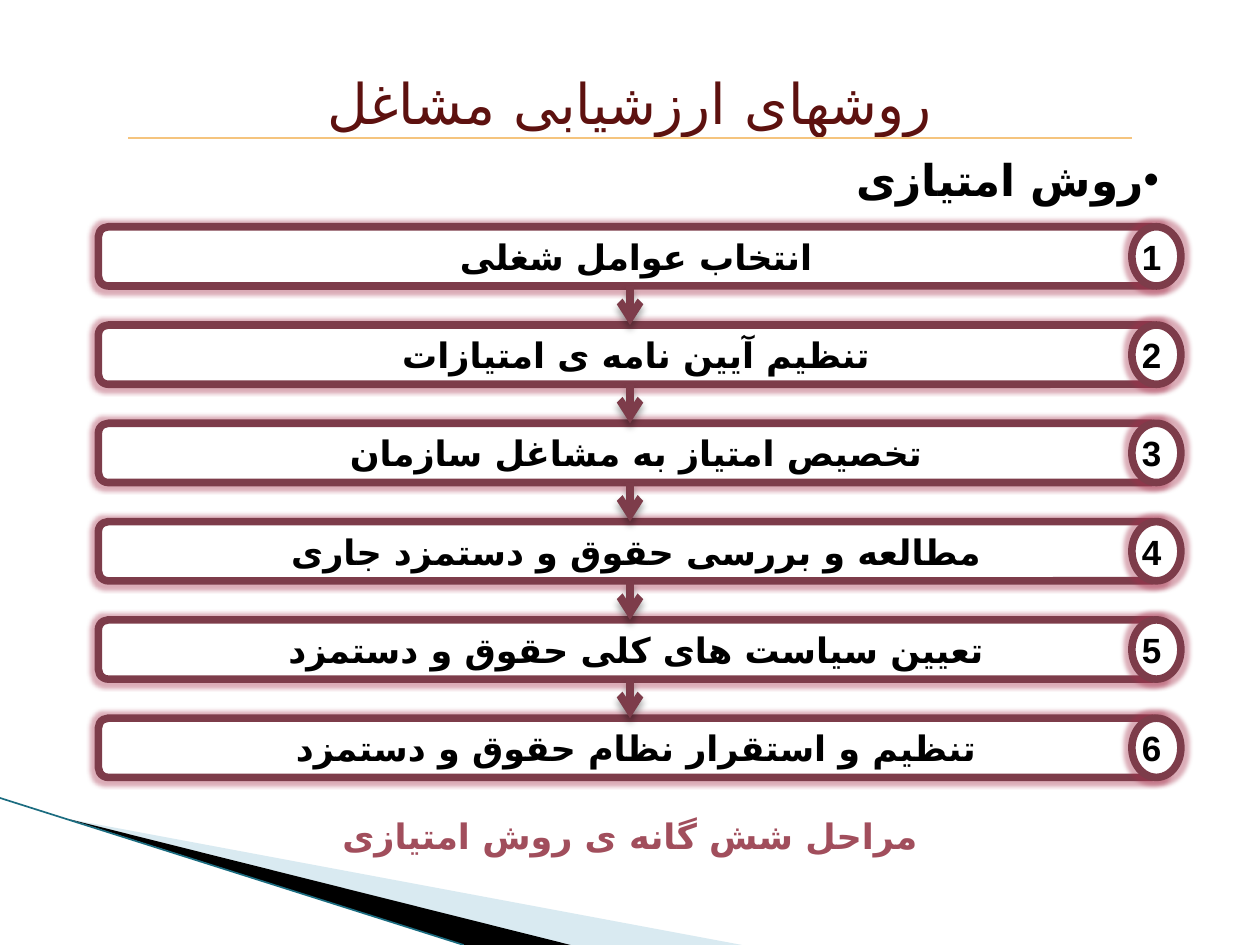
from lxml import etree
from pptx import Presentation
from pptx import util as u
from pptx.dml.color import RGBColor
from pptx.enum import shapes, text
from pptx.oxml import ns

Pt = u.Pt
COLORS = {"white": "FFFFFF", "black": "000000", "title": "5D110F", "rule": "F5C47E",
          "frame": "7D3C4A", "glow": "A5304B", "caption": "A14E5C",
          "wedge": "A0CBDC", "edge": "1B6C80"}
STEPS = ["انتخاب عوامل شغلی ", "تنظیم آیین نامه ی امتیازات ",
         "تخصیص امتیاز به مشاغل سازمان ", "مطالعه و بررسی حقوق و دستمزد جاری ",
         "تعیین سیاست های کلی حقوق و دستمزد ", "تنظیم و استقرار نظام حقوق و دستمزد "]


def rgb(name):
    return RGBColor.from_string(COLORS[name])


def add_xml(parent, tag, **attrs):
    return etree.SubElement(parent, ns.qn(tag), {k: str(v) for k, v in attrs.items()})


def add_effect(shape, tag, color, alpha, **attrs):
    """Give the shape one effect, such as a glow or an outer shadow."""
    sp_pr = shape._element.spPr
    for old in sp_pr.findall(ns.qn("a:effectLst")):
        sp_pr.remove(old)
    effect = add_xml(add_xml(sp_pr, "a:effectLst"), tag, **attrs)
    add_xml(add_xml(effect, "a:srgbClr", val=COLORS[color]), "a:alpha", val=alpha * 1000)


def write(shape, words, size, color="black", font="Arial", script_font="DejaVu Sans",
          bold=True, align="CENTER", anchor="TOP", spacing=None, bullet=None,
          indent=0, right_inset=7.2):
    """Fill the shape with one right-to-left paragraph."""
    frame = shape.text_frame
    frame.word_wrap = True
    frame.auto_size = text.MSO_AUTO_SIZE.NONE
    frame.vertical_anchor = getattr(text.MSO_ANCHOR, anchor)
    frame.margin_right = Pt(right_inset)
    paragraph = frame.paragraphs[0]
    p_pr = paragraph._p.get_or_add_pPr()
    p_pr.set("rtl", "1")
    if bullet:
        p_pr.set("marL", "0")
        p_pr.set("indent", str(Pt(indent)))
        add_xml(p_pr, "a:buFont", typeface="Arial")
        add_xml(p_pr, "a:buChar", char=bullet)
        add_xml(add_xml(p_pr, "a:tabLst"), "a:tab", pos=Pt(14), algn="l")
    paragraph.alignment = getattr(text.PP_ALIGN, align)
    if spacing:
        paragraph.line_spacing = spacing
    run = paragraph.add_run()
    run.text = words
    run.font.size, run.font.bold, run.font.name = Pt(size), bold, font
    run.font.color.rgb = rgb(color)
    add_xml(run._r.get_or_add_rPr(), "a:cs", typeface=script_font)


def add_line(slide, start, end, color, width):
    line = slide.shapes.add_connector(shapes.MSO_CONNECTOR.STRAIGHT,
                                      *(Pt(v) for v in start + end))
    line.line.color.rgb, line.line.width = rgb(color), Pt(width)
    add_xml(line._element.spPr, "a:effectLst")
    return line


def add_wedge(slide, points, color, alpha=100):
    builder = slide.shapes.build_freeform(*points[0], scale=Pt(1))
    builder.add_line_segments(points[1:], close=True)
    wedge = builder.convert_to_shape()
    wedge.shadow.inherit = False
    wedge.fill.solid()
    wedge.fill.fore_color.rgb = rgb(color)
    wedge.line.fill.background()
    fill_color = wedge._element.spPr.find(ns.qn("a:solidFill"))[0]
    add_xml(fill_color, "a:alpha", val=alpha * 1000)


def add_corner(slide, left, top, bottom):
    """Draw the wedges that start at the left edge and run to the bottom."""
    tip = (left + 39, top + 12)
    add_wedge(slide, [tip, (left + 424, bottom), (left + 325, bottom)], "wedge", 40)
    add_wedge(slide, [tip, (left + 326, bottom), (left + 265, bottom)], "black")
    add_line(slide, (left, top), (left + 265, bottom), "edge", 0.95)


def add_title(slide, left, top, width, height):
    title = slide.shapes.title
    title.left, title.top, title.width, title.height = map(Pt, (left, top, width, height))
    write(title, "روشهای ارزشیابی مشاغل", 32, color="title", bold=False, spacing=1.5)
    add_line(slide, (left + 73.4, top + 62.3), (left + width - 73.4, top + 62.3),
             "rule", 1.25)


def add_label(slide, box, words, size, **style):
    write(slide.shapes.add_textbox(*map(Pt, box)), words, size, spacing=1.5, **style)


def add_framed(slide, kind, box, words, **style):
    shape = slide.shapes.add_shape(kind, *map(Pt, box))
    shape.fill.solid()
    shape.fill.fore_color.rgb = rgb("white")
    shape.line.color.rgb, shape.line.width = rgb("frame"), Pt(4.33)
    add_effect(shape, "a:glow", "glow", 40, rad=Pt(5))
    write(shape, words, 20, font="Noto Sans Mono", anchor="MIDDLE", **style)


def add_arrow(slide, x, top, bottom):
    arrow = add_line(slide, (x, top), (x, bottom), "frame", 4.33)
    add_xml(arrow.line._get_or_add_ln(), "a:tailEnd", type="arrow")
    add_effect(arrow, "a:outerShdw", "black", 35, blurRad=Pt(4), dist=Pt(3),
               dir=90 * 60000, rotWithShape=0)


def add_steps(slide, left, top, width, bar_height=33.84, pitch=56.16):
    """Stack numbered bars, each joined to the next by an arrow."""
    badge_width = 28
    for number, step in enumerate(STEPS, 1):
        y = top + (number - 1) * pitch
        add_framed(slide, shapes.MSO_SHAPE.ROUNDED_RECTANGLE,
                   (left, y, width, bar_height), step)
        add_framed(slide, shapes.MSO_SHAPE.OVAL,
                   (left + width - 17, y, badge_width, bar_height), str(number),
                   script_font="Arial")
    for index in range(len(STEPS) - 1):
        y = top + index * pitch
        add_arrow(slide, left + width / 2, y + bar_height, y + pitch)


def main():
    deck = Presentation()
    deck.slide_width, deck.slide_height = Pt(720), Pt(540)
    slide = deck.slides.add_slide(deck.slide_layouts[5])
    add_corner(slide, 0, 456, 540)
    add_title(slide, 0, 16.5, 720, 65.5)
    add_label(slide, (5.8, 69, 708.4, 52.6), "روش امتیازی", 25,
              align="RIGHT", bullet="•", indent=28, right_inset=24)
    add_steps(slide, 56.2, 129.6, 607.6)
    add_label(slide, (5.8, 450, 708.4, 44), "مراحل شش گانه ی روش امتیازی", 20,
              color="caption")
    deck.save("out.pptx")


if __name__ == "__main__":
    main()
